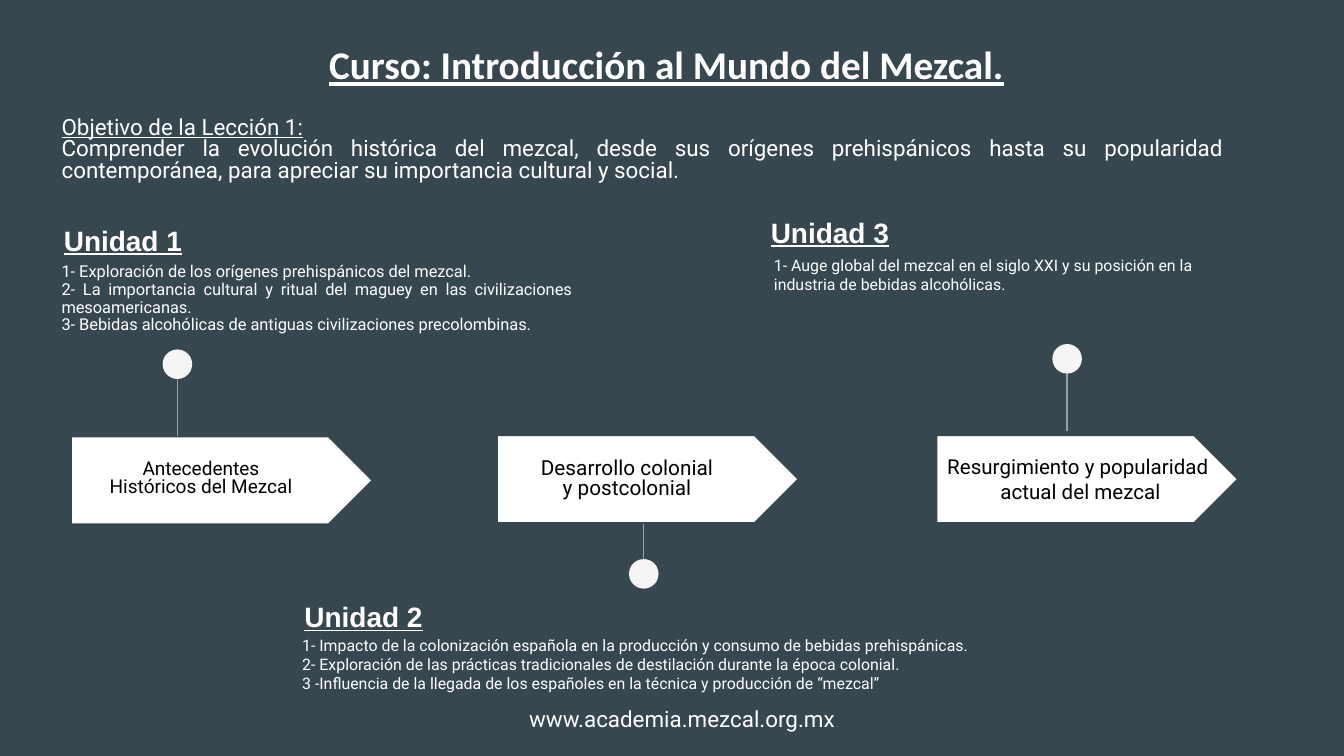
from lxml import etree
from pptx import Presentation
from pptx.dml.color import RGBColor
from pptx.enum.shapes import MSO_CONNECTOR, MSO_SHAPE
from pptx.enum.text import MSO_ANCHOR, PP_ALIGN
from pptx.oxml.ns import qn
from pptx.util import Inches, Pt

ARROW, DOT = MSO_SHAPE.PENTAGON, MSO_SHAPE.OVAL
STRAIGHT = MSO_CONNECTOR.STRAIGHT
LEFT, CENTER, FULL = PP_ALIGN.LEFT, PP_ALIGN.CENTER, PP_ALIGN.JUSTIFY
TOP, MIDDLE = MSO_ANCHOR.TOP, MSO_ANCHOR.MIDDLE
WHITE, BLACK, SLATE, PALE, GRAY = "FFFFFF", "000000", "37474F", "F5F5F5", "9E9E9E"
DOT_SIZE = 0.22

PINS = [(1.32, 2.64, 3.25, 2.6), (4.79, 4.34, 3.73, 4.16), (7.94, 2.61, 3.21, 2.56)]
STEPS = [
    (0.53, 3.25, (0.7, 3.31, 1.59, 0.51), ["Antecedentes Históricos del Mezcal"], 10.2, 0.8),
    (3.7, 3.24, (3.87, 3.31, 1.59, 0.51), ["Desarrollo colonial y postcolonial"], 11.1, 0.8),
    (6.97, 3.24, (6.92, 3.31, 2.24, 0.51),
     ["Resurgimiento y popularidad ", "actual del mezcal"], 11, 1),
]
UNITS = [
    ("Unidad 1", (0.23, 1.56), (0.36, 1.86, 4, 0.78), 8.8, FULL, 0.9, [
        "1- Exploración de los orígenes prehispánicos del mezcal.",
        "2- La importancia cultural y ritual del maguey en las civilizaciones mesoamericanas.",
        "3- Bebidas alcohólicas de antiguas civilizaciones precolombinas."]),
    ("Unidad 2", (2.02, 4.36), (2.15, 4.63, 5.52, 0.78), 8.5, FULL, 1, [
        "1- Impacto de la colonización española en la producción y consumo de bebidas prehispánicas.",
        "2- Exploración de las prácticas tradicionales de destilación durante la época colonial.",
        "3 -Influencia de la llegada de los españoles en la técnica y producción de “mezcal”"]),
    ("Unidad 3", (5.49, 1.5), (5.66, 1.8, 3.55, 1.12), 8.5, LEFT, 1, [
        "1- Auge global del mezcal en el siglo XXI y su posición en la industria de bebidas alcohólicas."]),
]
GOAL = ["Objetivo de la Lección 1:",
        "Comprender la evolución histórica del mezcal, desde sus orígenes prehispánicos hasta "
        "su popularidad contemporánea, para apreciar su importancia cultural y social."]


def color(code):
    """Turn a hex string into a colour."""
    return RGBColor.from_string(code)


def add_text(slide, box, lines, size, align=LEFT, space=1, ink=WHITE,
             font="Roboto", anchor=TOP, title=False):
    """Add a wrapped text box with one paragraph per line and return its frame."""
    frame = slide.shapes.add_textbox(*map(Inches, box)).text_frame
    frame.word_wrap = True
    frame.vertical_anchor = anchor
    frame.margin_left = frame.margin_right = Inches(0.1)
    frame.margin_top = frame.margin_bottom = Inches(0.1)
    frame.text = "\n".join(lines)
    for para in frame.paragraphs:
        para.alignment = align
        para.line_spacing = space
        for run in para.runs:
            run.font.name = font
            run.font.size = Pt(size)
            run.font.color.rgb = color(ink)
            run.font.bold = run.font.underline = title
    return frame


def add_block(slide, kind, box, fill, edge=None):
    """Add a flat filled shape, outlined when an edge colour is given."""
    shape = slide.shapes.add_shape(kind, *map(Inches, box))
    shape.shadow.inherit = False
    shape.fill.solid()
    shape.fill.fore_color.rgb = color(fill)
    if edge:
        shape.line.color.rgb = color(edge)
        shape.line.width = Pt(0.75)
    else:
        shape.line.fill.background()


def add_pin(slide, x, start, end, top):
    """Add a thin upright stem and the dot that covers its start."""
    stem = slide.shapes.add_connector(STRAIGHT, *map(Inches, (x, start, x, end)))
    stem.line.color.rgb = color(GRAY)
    stem.line.width = Pt(0.75)
    etree.SubElement(stem._element.spPr, qn("a:effectLst"))
    add_block(slide, DOT, (x - DOT_SIZE / 2, top, DOT_SIZE, DOT_SIZE), PALE)


def add_step(slide, left, top, box, lines, size, space):
    """Add an arrow block with its label."""
    add_block(slide, ARROW, (left, top, 2.24, 0.65), WHITE, SLATE)
    add_text(slide, box, lines, size, CENTER, space, BLACK, anchor=MIDDLE)


def add_unit(slide, name, spot, box, size, align, space, lines):
    """Add a unit heading and its list of topics."""
    add_text(slide, box, lines, size, align, space)
    add_text(slide, (*spot, 1.37, 0.39), [name], 15, CENTER, font="Arial", title=True)


def main():
    """Build and save the course slide."""
    deck = Presentation()
    deck.slide_width = Inches(10)
    deck.slide_height = deck.slide_width * 9 // 16
    slide = deck.slides.add_slide(deck.slide_layouts[6])
    slide.background.fill.solid()
    slide.background.fill.fore_color.rgb = color(SLATE)

    add_text(slide, (0.76, 0.27, 8.4, 0.51), ["Curso: Introducción al Mundo del Mezcal."],
             21, CENTER, 0.8, font="Calibri", title=True)
    goal = add_text(slide, (0.36, 0.78, 8.85, 0.78), GOAL, 12, FULL, 0.8)
    goal.paragraphs[0].runs[0].font.underline = True
    for pin in PINS:
        add_pin(slide, *pin)
    for step in STEPS:
        add_step(slide, *step)
    for unit in UNITS:
        add_unit(slide, *unit)
    add_text(slide, (1.88, 5.15, 6.39, 0.39), ["www.academia.mezcal.org.mx"], 12, CENTER)
    deck.save("out.pptx")


if __name__ == "__main__":
    main()
